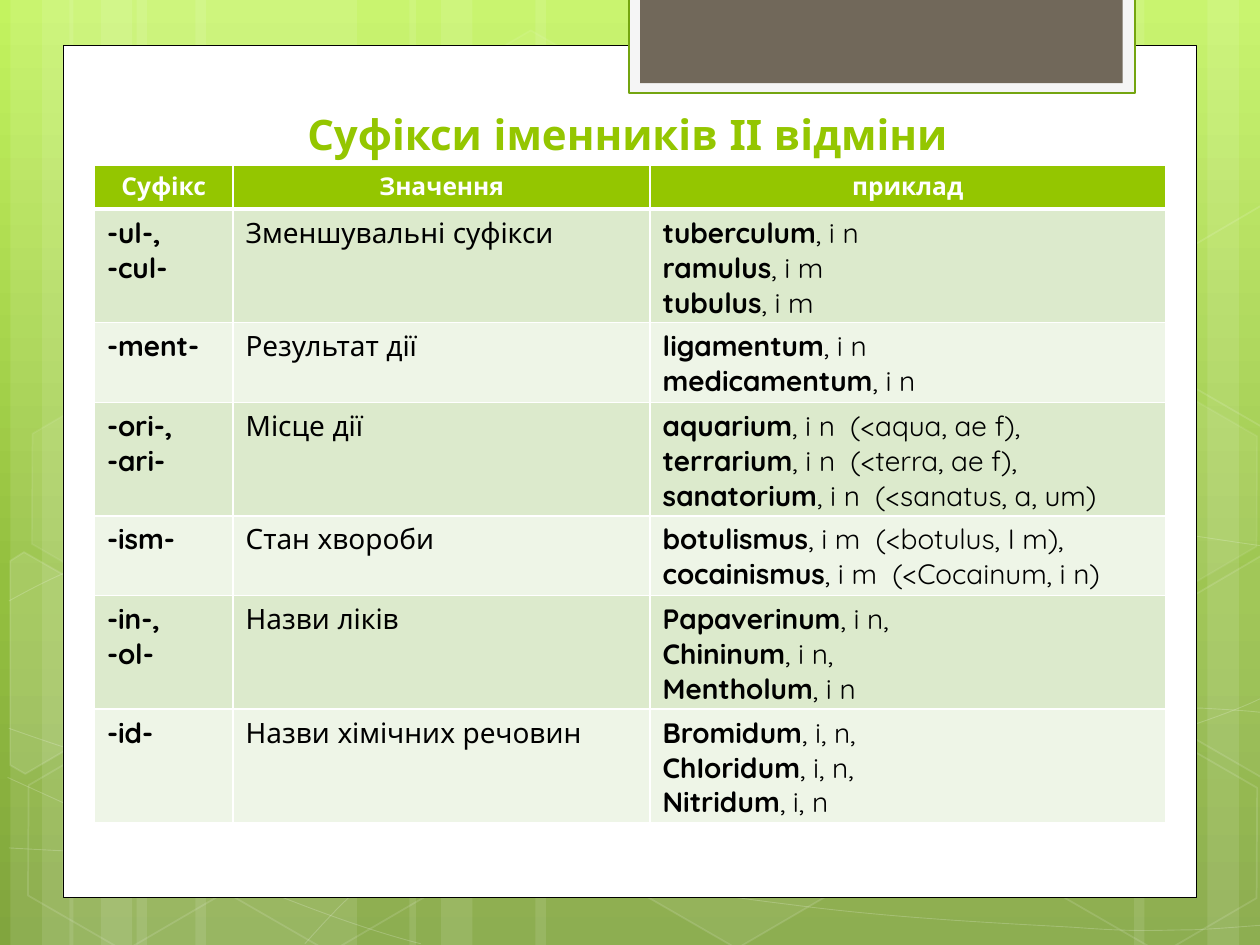
from copy import deepcopy
from math import cos, radians, sin

from lxml.etree import SubElement
from pptx import Presentation
from pptx.dml.color import RGBColor
from pptx.enum.shapes import MSO_SHAPE
from pptx.enum.text import MSO_ANCHOR, PP_ALIGN
from pptx.oxml.ns import qn
from pptx.util import Inches, Pt

COLUMNS, ROWS = 10, 7.5  # the slide as a grid of one-inch cells
FONT = "Quicksand"
TILT = 30  # degrees that every hexagon is turned
COLORS = {
    "white": "FFFFFF", "black": "000000", "green": "94C600", "outline": "74A510",
    "frame": "F5F5F5", "brown": "71685A", "odd": "DCEACC", "even": "EEF5E7",
    "sky": "C3F35F", "meadow": "93BF3F", "moss": "81A53E",
}
STRIPES = [  # left and width in twelfths of a column
    (13, 21), (1, 6), (4, 10), (18.6, 21), (6.6, 6), (9.6, 10),
    (88, 21), (115, 6), (108, 10), (51, 37), (39, 6), (42, 10),
]
CURVES = [  # start point, then three points for each Bezier piece
    [(0.07, 6.73), (0.61, 6.76), (1.15, 6.79), (1.9, 6.78), (2.65, 6.77), (3.58, 6.75),
     (4.58, 6.65), (5.58, 6.55), (7, 6.36), (7.92, 6.17), (8.83, 5.98), (9.77, 5.68),
     (10.07, 5.51)],
    [(0.07, 4.77), (0.36, 4.61), (0.65, 4.46), (1.21, 4.31), (1.78, 4.16), (2.59, 3.94),
     (3.47, 3.87), (4.36, 3.8), (5.44, 3.79), (6.54, 3.87), (7.64, 3.95), (9.47, 4.26),
     (10.07, 4.34)],
    [(0.06, 6.17), (1.27, 6.72), (2.47, 7.27), (3.34, 7.49)],
    [(0.07, 5.78), (0.38, 5.89), (0.7, 6), (1.28, 6.16), (1.86, 6.31), (2.73, 6.56),
     (3.57, 6.73), (4.4, 6.9), (5.45, 7.08), (6.28, 7.18), (7.11, 7.29), (8, 7.33),
     (8.53, 7.36), (9.05, 7.4), (9.19, 7.38), (9.45, 7.38), (9.71, 7.37), (9.89, 7.35),
     (10.07, 7.34)],
    [(2.42, 7.49), (2.6, 7.29), (2.78, 7.09), (3.02, 6.91), (3.26, 6.73), (3.6, 6.53),
     (3.88, 6.39), (4.16, 6.25), (4.33, 6.19), (4.7, 6.09), (5.06, 5.99), (5.73, 5.85),
     (6.08, 5.78), (6.44, 5.71), (6.49, 5.71), (6.8, 5.69), (7.11, 5.66), (7.6, 5.63),
     (7.94, 5.62), (8.29, 5.61), (8.86, 5.62), (8.86, 5.62), (9.08, 5.62), (9.31, 5.62),
     (9.53, 5.62), (9.71, 5.63), (9.88, 5.64), (9.97, 5.65), (10.06, 5.66), (10.03, 5.65),
     (10.06, 5.66)],
]
HEXAGONS = [  # left, top, fill opacity, line opacity
    (3.34, 0.36, 4, 8), (4.97, 5.89, 6, 12), (0.11, 5.91, 0, 12),
    (0.14, 3.12, 7, 8), (1.74, 5.92, 0, 12), (7.53, 4.53, 10, 12),
    (8.34, 5.93, 0, 12), (8.34, 3.14, 7, 8),
]
CUT_HEXAGONS = [  # centre of turning, points as they show, fill opacity
    ((0.36, 5.35), [(0.08, 4.45), (0.19, 4.38), (0.96, 4.82), (0.95, 5.7), (0.2, 6.14),
                    (0.08, 6.07)], 10),
    ((9.85, 5.2), [(9.26, 4.85), (10.01, 4.41), (10.09, 4.46), (10.09, 6.13), (10.02, 6.17),
                   (9.26, 5.73)], 4),
    ((9.85, 2.41), [(9.26, 2.07), (10.01, 1.63), (10.1, 1.68), (10.09, 3.35), (10.02, 3.39),
                    (9.26, 2.95)], 0),
]
HEADER = ["Суфікс", "Значення", "приклад"]
SUFFIXES = [  # row height, then paragraphs of each cell; asterisks enclose bold text
    (0.52, ["*-ul-,*", "*-cul-*"], ["Зменшувальні суфікси"],
     ["*tuberculum*, i n", "*ramulus*, i m", "*tubulus*, i m"]),
    (0.19, ["*-ment-*"], ["Результат дії"], ["*ligamentum*, i n", "*medicamentum*, i n"]),
    (0.33, ["*-ori-,*", "*-ari-*"], ["Місце дії"],
     ["*aquarium*, i n  (<aqua, ae f),", "*terrarium*, i n  (<terra, ae f),",
      "*sanatorium*, i n  (<sanatus, a, um)"]),
    (0.16, ["*-ism-*"], ["Стан хвороби"],
     ["*botulismus*, i m  (<botulus, I m), *cocainismus*, i m  (<Cocainum, i n)"]),
    (0.15, ["*-in-,*", "*-ol-*"], ["Назви ліків"],
     ["*Papaverinum*, i n,", "*Chininum*, i n,", "*Mentholum*, i n"]),
    (0.13, ["*-id-*"], ["Назви хімічних речовин"],
     ["*Bromidum*, i, n,", "*ChIoridum*, i, n,", "*Nitridum*, i, n"]),
]


def color(name):
    return RGBColor.from_string(COLORS[name])


def set_opacity(shape, where, percent):
    if percent < 100:
        element = shape.element.spPr.find("/".join(qn(tag) for tag in where))
        SubElement(element, qn("a:alpha"), val=str(percent * 1000))


def paint(shape, fill=None, opacity=100, line=None, width=1, line_opacity=100):
    shape.shadow.inherit = False
    if fill and opacity:
        shape.fill.solid()
        shape.fill.fore_color.rgb = color(fill)
        set_opacity(shape, ["a:solidFill", "a:srgbClr"], opacity)
    else:
        shape.fill.background()
    if line:
        shape.line.color.rgb = color(line)
        shape.line.width = Pt(width)
        set_opacity(shape, ["a:ln", "a:solidFill", "a:srgbClr"], line_opacity)
    else:
        shape.line.fill.background()


def add_preset(slide, preset, box, **style):
    shape = slide.shapes.add_shape(preset, *map(Inches, box))
    paint(shape, **style)
    return shape


def add_outline(slide, points, close, **style):
    start, *others = [(Inches(x), Inches(y)) for x, y in points]
    builder = slide.shapes.build_freeform(*start)
    builder.add_line_segments(others, close=close)
    shape = builder.convert_to_shape()
    paint(shape, **style)
    return shape


def add_curve(slide, controls, **style):
    """Draw an outline through the controls, then join each three segments into a Bezier piece."""
    shape = add_outline(slide, controls, False, **style)
    segments = list(shape.element.iter(qn("a:lnTo")))
    for first in range(0, len(segments), 3):
        piece = segments[first:first + 3]
        curve = SubElement(piece[0].getparent(), qn("a:cubicBezTo"))
        for segment in piece:
            curve.append(segment[0])
            segment.getparent().remove(segment)


def turn_back(point, center):
    dx, dy = point[0] - center[0], point[1] - center[1]
    cosine, sine = cos(radians(TILT)), sin(radians(TILT))
    return center[0] + dx * cosine + dy * sine, center[1] + dy * cosine - dx * sine


def add_gradient_background(slide):
    fill = slide.background.fill
    fill.gradient()
    fill.gradient_angle = 270
    stops = slide.element.find(".//" + qn("a:gsLst"))
    stops.append(deepcopy(stops[-1]))
    for stop, position, name in zip(fill.gradient_stops, (0, 0.62, 1), ("sky", "meadow", "moss")):
        stop.position = position
        stop.color.rgb = color(name)


def add_decoration(slide):
    for left, width in STRIPES:
        add_preset(slide, MSO_SHAPE.RECTANGLE, (left / 12, 0, width / 12, ROWS),
                   fill="white", opacity=10)
    for controls in CURVES:
        add_curve(slide, controls, line="white", width=0.5, line_opacity=20)
    for left, top, opacity, line_opacity in HEXAGONS:
        hexagon = add_preset(slide, MSO_SHAPE.HEXAGON, (left, top, 1.75, 1.52), fill="white",
                             opacity=opacity, line="white", line_opacity=line_opacity)
        hexagon.adjustments[0] = 0.285
        hexagon.rotation = TILT
    for center, points, opacity in CUT_HEXAGONS:
        level = [turn_back(point, center) for point in points]
        add_outline(slide, level, True, fill="white", opacity=opacity,
                    line="white", line_opacity=12).rotation = TILT


def add_panel(slide):
    rectangle = MSO_SHAPE.RECTANGLE
    add_preset(slide, rectangle, (0.5, 0.36, 9, 6.76), fill="white", line="black", width=0.5)
    add_preset(slide, rectangle, (4.99, -0.02, 4.02, 0.76), fill="frame", line="outline", width=1.25)
    add_preset(slide, rectangle, (5.08, -0.02, 3.83, 0.68), fill="brown")


def add_run(paragraph, text, size, name, bold):
    run = paragraph.add_run()
    run.text = text
    run.font.name, run.font.size, run.font.bold = FONT, Pt(size), bold
    run.font.color.rgb = color(name)


def add_title(slide, text):
    frame = slide.shapes.add_textbox(*map(Inches, (1.14, 0.76, 7.68, 0.55))).text_frame
    frame.word_wrap = True
    frame.vertical_anchor = MSO_ANCHOR.BOTTOM
    frame.paragraphs[0].alignment = PP_ALIGN.CENTER
    add_run(frame.paragraphs[0], text, 24, "green", True)


def style_cell(cell, fill, bottom=1):
    cell.fill.solid()
    cell.fill.fore_color.rgb = color(fill)
    properties = cell._tc.get_or_add_tcPr()
    for index, (side, width) in enumerate(zip("LRTB", (1, 1, 1, bottom))):
        line = SubElement(properties, qn("a:ln" + side), w=str(Pt(width)))
        SubElement(SubElement(line, qn("a:solidFill")), qn("a:srgbClr"), val=COLORS["white"])
        properties.insert(index, line)


def write_lines(cell, lines):
    frame = cell.text_frame
    for index, line in enumerate(lines):
        paragraph = frame.add_paragraph() if index else frame.paragraphs[0]
        for part, text in enumerate(line.split("*")):
            if text:
                add_run(paragraph, text, 16, "black", part % 2 == 1)


def add_suffix_table(slide):
    widths = [1.1, 3.31, 4.09]
    heights = [0.35] + [row[0] for row in SUFFIXES]  # rows grow to fit their text
    box = map(Inches, (0.75, 1.31, sum(widths), 5.22))
    graphic_frame = slide.shapes.add_table(len(heights), len(widths), *box)
    table = graphic_frame.table
    for column, width in zip(table.columns, widths):
        column.width = Inches(width)
    for row, height in zip(table.rows, heights):
        row.height = Inches(height)
    graphic_frame.height = Inches(5.22)
    for cell, text in zip(table.rows[0].cells, HEADER):
        style_cell(cell, "green", bottom=3)
        paragraph = cell.text_frame.paragraphs[0]
        paragraph.alignment = PP_ALIGN.CENTER
        add_run(paragraph, text, 14, "white", True)
    for number, (_, *contents) in enumerate(SUFFIXES, 1):
        for cell, lines in zip(table.rows[number].cells, contents):
            style_cell(cell, "odd" if number % 2 else "even")
            write_lines(cell, lines)


def main():
    presentation = Presentation()
    presentation.slide_width, presentation.slide_height = Inches(COLUMNS), Inches(ROWS)
    slide = presentation.slides.add_slide(presentation.slide_layouts[6])
    add_gradient_background(slide)
    add_decoration(slide)
    add_panel(slide)
    add_title(slide, "Суфікси іменників ІІ відміни")
    add_suffix_table(slide)
    presentation.save("out.pptx")


if __name__ == "__main__":
    main()
